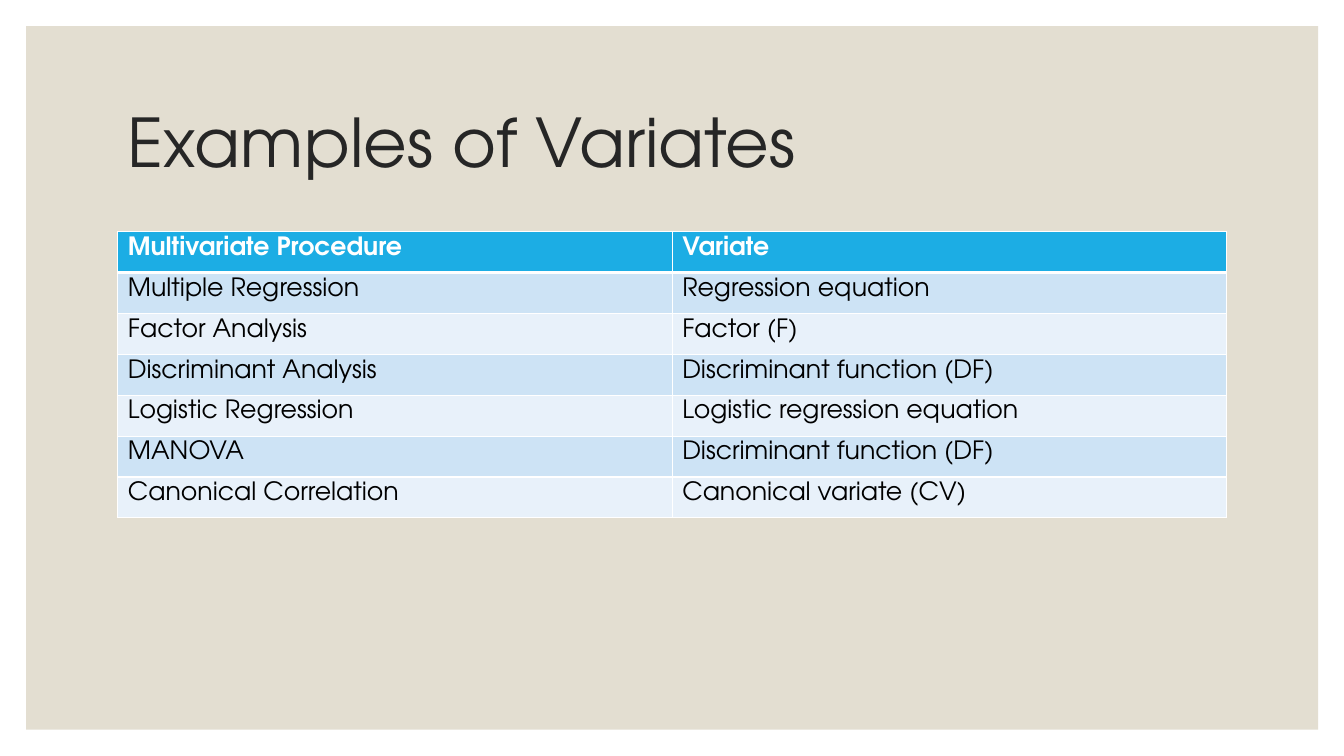
from lxml import etree
from pptx import Presentation
from pptx.dml.color import RGBColor
from pptx.enum.shapes import MSO_SHAPE
from pptx.enum.text import MSO_ANCHOR, PP_ALIGN
from pptx.oxml.ns import qn
from pptx.util import Cm, Pt

RECT = MSO_SHAPE.RECTANGLE
MIDDLE = MSO_ANCHOR.MIDDLE
LEFT = PP_ALIGN.LEFT
TITLE_ONLY = 5

FONT = "TeX Gyre Adventor"
WHITE, BLACK, INK = "FFFFFF", "000000", "262626"
SAND, BLUE = "E3DED1", "1CADE4"
BANDS = ["CDE3F5", "E8F1FA"]

ROWS = [
    ("Multivariate Procedure", "Variate"),
    ("Multiple Regression", "Regression equation"),
    ("Factor Analysis", "Factor (F)"),
    ("Discriminant Analysis", "Discriminant function (DF)"),
    ("Logistic Regression", "Logistic regression equation"),
    ("MANOVA", "Discriminant function (DF)"),
    ("Canonical Correlation", "Canonical variate (CV)"),
]


def rgb(code):
    return RGBColor.from_string(code)


def paint(item, code):
    item.fill.solid()
    item.fill.fore_color.rgb = rgb(code)


def edge(cell, side, width):
    """Add a white border on one side, placed before the cell's fill."""
    props = cell._tc.get_or_add_tcPr()
    line = etree.Element(qn("a:ln" + side), w=str(Pt(width)))
    fill = etree.SubElement(line, qn("a:solidFill"))
    etree.SubElement(fill, qn("a:srgbClr"), val=WHITE)
    props.insert("LRTB".index(side), line)


class Deck:
    def __init__(self, font):
        self.font = font
        self.prs = Presentation()
        self.prs.slide_width, self.prs.slide_height = Cm(33.87), Cm(19.05)
        self.slide = self.prs.slides.add_slide(
            self.prs.slide_layouts[TITLE_ONLY])

    def label(self, frame, text, size, color, bold=False):
        """Add one styled run to the frame and return its paragraph."""
        para = frame.paragraphs[0]
        para.alignment = LEFT
        run = para.add_run()
        run.text = text
        run.font.name, run.font.size = self.font, Pt(size)
        run.font.bold, run.font.color.rgb = bold, rgb(color)
        return para

    def panel(self, x, y, w, h, color):
        """Draw a plain backdrop behind the title."""
        box = self.slide.shapes.add_shape(RECT, Cm(x), Cm(y), Cm(w), Cm(h))
        box.shadow.inherit = False
        box.line.fill.background()
        paint(box, color)
        self.slide.shapes.title._element.addprevious(box._element)

    def title(self, x, y, w, h, text):
        head = self.slide.shapes.title
        head.left, head.top, head.width, head.height = map(Cm, (x, y, w, h))
        head.text_frame.vertical_anchor = MIDDLE
        head.text_frame.word_wrap = True
        self.label(head.text_frame, text, 48, INK).line_spacing = 0.9

    def table(self, x, y, w, h, rows):
        table = self.slide.shapes.add_table(
            len(rows), len(rows[0]), Cm(x), Cm(y), Cm(w), Cm(h)).table
        for r, row in enumerate(rows):
            top = r == 0
            for c, text in enumerate(row):
                cell = table.cell(r, c)
                paint(cell, BLUE if top else BANDS[(r - 1) % 2])
                self.label(cell.text_frame, text, 18,
                           WHITE if top else BLACK, top)
                for side in "LRTB":
                    thick = (side, r) in (("B", 0), ("T", 1))
                    edge(cell, side, 3 if thick else 1)


def main():
    deck = Deck(FONT)
    deck.panel(0.66, 0.66, 32.56, 17.73, SAND)
    deck.title(2.97, 1.78, 27.94, 3.81, "Examples of Variates")
    deck.table(2.97, 5.84, 27.94, 7.21, ROWS)
    deck.prs.save("out.pptx")


if __name__ == "__main__":
    main()
